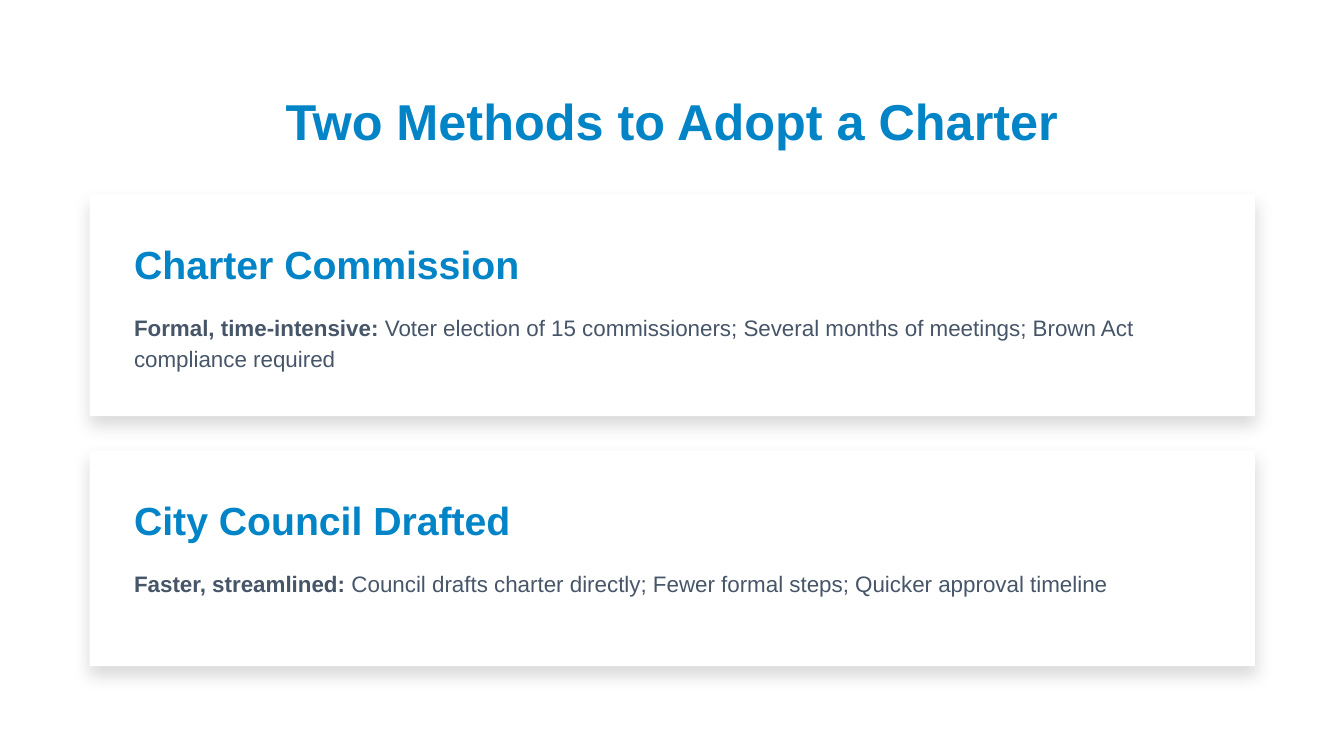
from lxml import etree
from pptx import Presentation
from pptx.dml.color import RGBColor
from pptx.enum.shapes import MSO_SHAPE as Shape
from pptx.enum.text import PP_ALIGN as Align
from pptx.oxml.ns import qn
from pptx.util import Inches, Pt

# Content
TITLE = "Two Methods to Adopt a Charter"
METHODS = [
    {"name": "Charter Commission", "label": "Formal, time-intensive:",
     "detail": " Voter election of 15 commissioners; Several months of meetings; "
               "Brown Act compliance required",
     "height": 2.2, "body": (10.67, 0.62)},
    {"name": "City Council Drafted", "label": "Faster, streamlined:",
     "detail": " Council drafts charter directly; Fewer formal steps; "
               "Quicker approval timeline",
     "height": 2.14, "body": (10.88, 0.31)},
]
COLORS = {"paper": "FFFFFF", "accent": "0284C7", "body": "475569", "shadow": "000000"}
FONT = "Arial"

# Layout in inches
WIDTH, HEIGHT = 13.33, 7.5
MARGIN, FIRST_TOP, GAP = 0.89, 1.93, 0.34
PADDING = 0.44
NAME_OFFSET, BODY_OFFSET = 0.45, 1.14
CARD_WIDTH = 11.56
NAME_WIDTH = 10.88
TITLE_WIDTH = 11.79


def add_shadow(shape, blur=12, distance=6, angle=90, opacity=15):
    shape.shadow.inherit = False
    effects = shape.element.spPr.find(qn("a:effectLst"))
    shadow = etree.SubElement(effects, qn("a:outerShdw"), blurRad=str(Pt(blur)),
                              dist=str(Pt(distance)), dir=str(angle * 60000),
                              algn="ctr", rotWithShape="0")
    color = etree.SubElement(shadow, qn("a:srgbClr"), val=COLORS["shadow"])
    etree.SubElement(color, qn("a:alpha"), val=str(opacity * 1000))


def add_card(page, top, height):
    card = page.shapes.add_shape(Shape.RECTANGLE, Inches(MARGIN), Inches(top),
                                 Inches(CARD_WIDTH), Inches(height))
    card.fill.solid()
    card.fill.fore_color.rgb = RGBColor.from_string(COLORS["paper"])
    card.line.fill.background()
    add_shadow(card)


def add_text(page, place, spans, size, leading, color, align=Align.LEFT):
    """Each span is a pair of wording and bold flag."""
    frame = page.shapes.add_textbox(*map(Inches, place)).text_frame
    frame.word_wrap = True
    frame.margin_left = frame.margin_right = frame.margin_top = frame.margin_bottom = 0
    para = frame.paragraphs[0]
    para.alignment = align
    para.line_spacing = Pt(size * leading)
    para.font.name, para.font.size = FONT, Pt(size)
    para.font.color.rgb = RGBColor.from_string(COLORS[color])
    for wording, bold in spans:
        span = para.add_run()
        span.text = wording
        span.font.bold = bold


def main():
    deck = Presentation()
    deck.slide_width, deck.slide_height = Inches(WIDTH), Inches(HEIGHT)
    page = deck.slides.add_slide(deck.slide_layouts[6])
    page.background.fill.solid()
    page.background.fill.fore_color.rgb = RGBColor.from_string(COLORS["paper"])

    # Title
    add_text(page, ((WIDTH - TITLE_WIDTH) / 2, MARGIN, TITLE_WIDTH, 0.6),
             [(TITLE, True)], 36, 1.2, "accent", Align.CENTER)

    # One card per method
    left, top = MARGIN + PADDING, FIRST_TOP
    for method in METHODS:
        add_card(page, top, method["height"])
        add_text(page, (left, top + NAME_OFFSET, NAME_WIDTH, 0.47),
                 [(method["name"], True)], 28, 1.2, "accent")
        add_text(page, (left, top + BODY_OFFSET, *method["body"]),
                 [(method["label"], True), (method["detail"], False)], 16, 1.4, "body")
        top += method["height"] + GAP

    deck.save("out.pptx")


if __name__ == "__main__":
    main()
